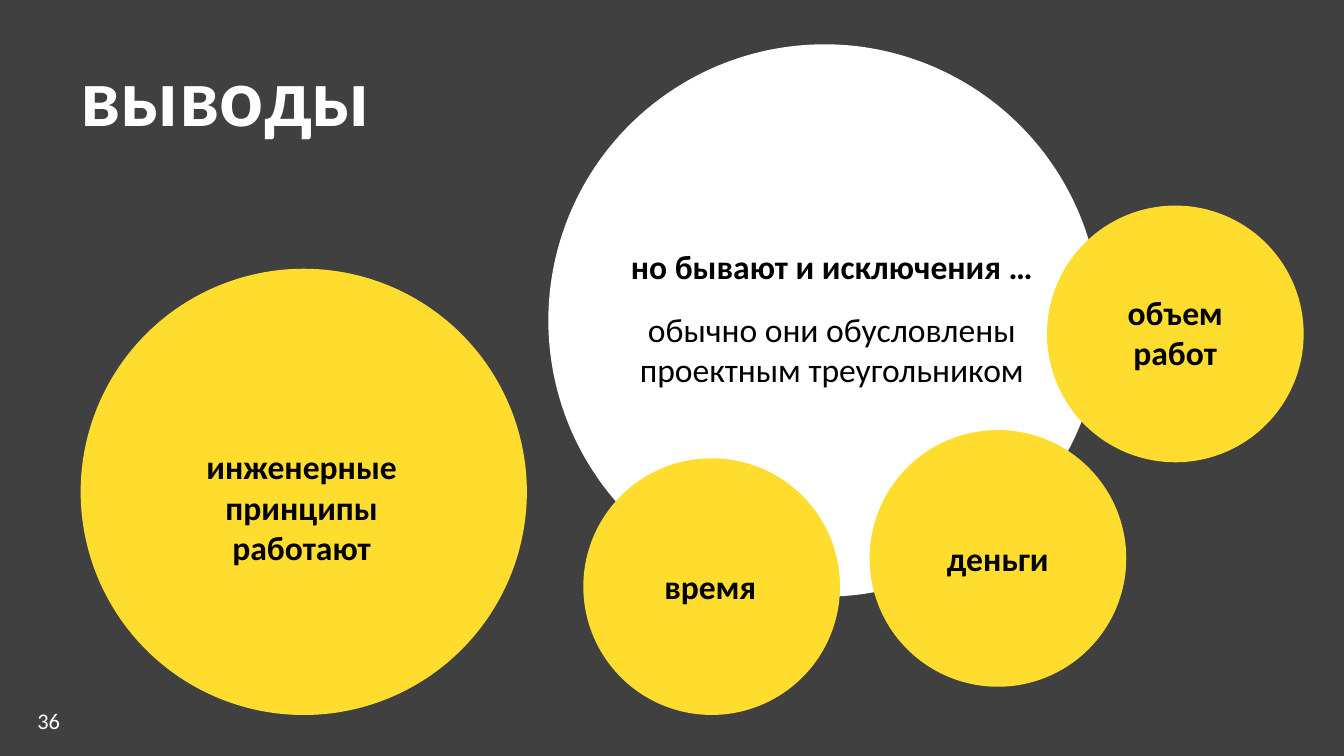
from pptx import Presentation
from pptx import util as u
from pptx.dml import color
from pptx.enum import shapes, text

DARK, WHITE, YELLOW, BLACK = "404040", "FFFFFF", "FFDD2F", "000000"

prs = Presentation()
prs.slide_width = u.Inches(10)
prs.slide_height = prs.slide_width * 9 // 16
s = prs.slides.add_slide(prs.slide_layouts[6])
COL = prs.slide_width / 100  # square grid: 100 columns, 56.25 rows


def add_shape(parent, kind, box, fill):
    sp = parent.shapes.add_shape(kind, *[round(n * COL) for n in box])
    sp.shadow.inherit = False
    sp.fill.solid()
    sp.fill.fore_color.rgb = color.RGBColor.from_string(fill)
    sp.line.fill.background()
    return sp


def add_text(parent, box, lines, size, hue, align, anchor, after=0):
    tf = parent.shapes.add_textbox(*[round(n * COL) for n in box]).text_frame
    tf.word_wrap = True
    tf.vertical_anchor = anchor
    tf.text = "\n".join(line for line, bold in lines)
    for p, (line, bold) in zip(tf.paragraphs, lines):
        p.alignment = align
        p.space_after = u.Pt(after)
        f = p.runs[0].font
        f.name, f.size, f.bold = "Calibri", u.Pt(size), bold
        f.color.rgb = color.RGBColor.from_string(hue)


# Background, with square corners
back = add_shape(s, shapes.MSO_SHAPE.ROUNDED_RECTANGLE, (0, 0, 100, 56.25), DARK)
back.adjustments[0] = 0

# Title and slide number
left, middle = text.PP_ALIGN.LEFT, text.MSO_ANCHOR.MIDDLE
add_text(s, (5, 2.3, 90, 9.4), [("выводы", True)], 44, WHITE, left, middle)
add_text(s, (1.8, 52.15, 23.3, 3), [("36", False)], 12, WHITE, left, middle)

# Circles: left, top, diameter, fill, text box, paragraphs (text, bold), space after
circles = [
    (6, 20, 33.2, YELLOW, (11.1, 32.7, 22.7, 10.1),
     [("инженерные принципы работают", True)], 0),
    (40.8, 3.3, 41.1, WHITE, (45.4, 17.8, 33, 11.8),
     [("но бывают и исключения …", True),
      ("обычно они обусловлены проектным треугольником", False)], 12),
    (43.4, 34.1, 19.1, YELLOW, (45.2, 41.6, 15.3, 3.1), [("время", True)], 12),
    (64.7, 32, 19.1, YELLOW, (66.6, 39.5, 15.3, 4), [("деньги", True)], 12),
    (77.9, 15.3, 19.1, YELLOW, (79.8, 21.2, 15.3, 7.1), [("объем работ", True)], 12),
]
for x, y, d, fill, box, lines, after in circles:
    group = s.shapes.add_group_shape()
    add_shape(group, shapes.MSO_SHAPE.OVAL, (x, y, d, d), fill)
    add_text(group, box, lines, 18, BLACK, text.PP_ALIGN.CENTER,
             text.MSO_ANCHOR.TOP, after)

prs.save("out.pptx")
